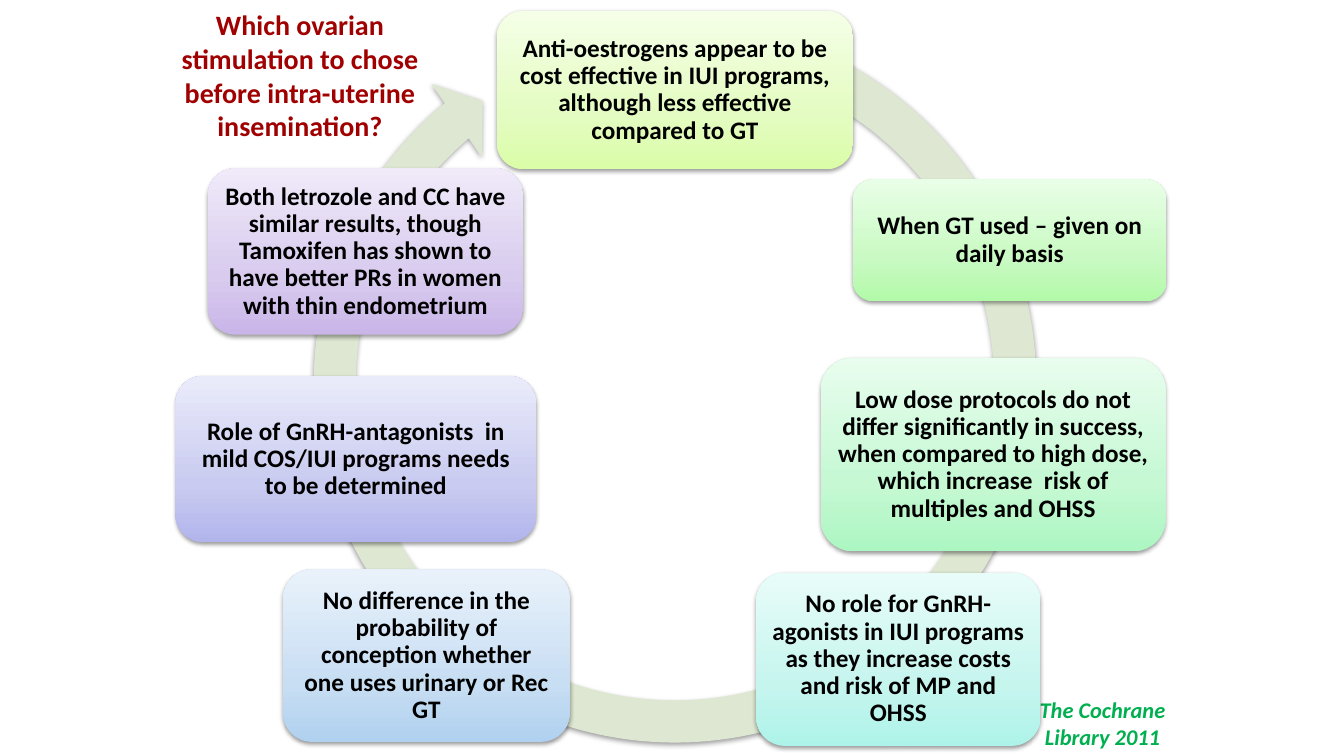
from copy import deepcopy
from dataclasses import dataclass

from lxml import etree
from pptx import Presentation
from pptx.dml.color import RGBColor
from pptx.enum.shapes import MSO_SHAPE
from pptx.enum.text import MSO_ANCHOR, PP_ALIGN
from pptx.oxml.ns import qn
from pptx.util import Pt

ROUNDED = MSO_SHAPE.ROUNDED_RECTANGLE
RING = MSO_SHAPE.CIRCULAR_ARROW
MIDDLE, TOP = MSO_ANCHOR.MIDDLE, MSO_ANCHOR.TOP
CENTER = PP_ALIGN.CENTER
EMU_PER_PX = 9144  # 100 px to the inch


@dataclass(frozen=True)
class Theme:
    font: str = "Calibri"
    ring: str = "DEE7D1"
    text: str = "000000"
    title: str = "A00000"
    source: str = "00B050"
    title_size: int = 20
    card_size: int = 18
    source_size: int = 16


class Deck:
    def __init__(self, prs, theme):
        self.theme = theme
        self.slide = prs.slides.add_slide(prs.slide_layouts[6])

    def box(self, px):
        return [v * EMU_PER_PX for v in px]

    def shadow(self, sp):
        sp.shadow.inherit = False
        effects = sp._element.spPr.find(qn("a:effectLst"))
        outer = etree.SubElement(effects, qn("a:outerShdw"), blurRad="40000",
                                 dist="20000", dir="5400000", rotWithShape="0")
        color = etree.SubElement(outer, qn("a:srgbClr"), val="000000")
        etree.SubElement(color, qn("a:alpha"), val="38000")

    def set_text(self, sp, lines, color, size, anchor=MIDDLE, spacing=1.0, inset=None,
                 italic=False):
        tf = sp.text_frame
        frame = {"word_wrap": True, "vertical_anchor": anchor}
        if inset is not None:
            sides = ("left", "top", "right", "bottom")
            frame.update({f"margin_{side}": inset * EMU_PER_PX for side in sides})
        for name, value in frame.items():
            setattr(tf, name, value)
        font = {"name": self.theme.font, "size": Pt(size), "bold": True, "italic": italic}
        for i, line in enumerate(lines):
            p = tf.paragraphs[0] if i == 0 else tf.add_paragraph()
            p.alignment, p.line_spacing = CENTER, spacing
            r = p.add_run()
            r.text = line
            for name, value in font.items():
                setattr(r.font, name, value)
            r.font.color.rgb = RGBColor.from_string(color)

    def label(self, px, lines, color, size, **style):
        sp = self.slide.shapes.add_textbox(*self.box(px))
        self.set_text(sp, lines, color, size, **style)

    def shape(self, kind, px):
        sp = self.slide.shapes.add_shape(kind, *self.box(px))
        sp.line.fill.background()
        self.shadow(sp)
        return sp

    def ring(self, px, adjustments):
        sp = self.shape(RING, px)
        for i, value in enumerate(adjustments):
            sp.adjustments[i] = value
        sp.fill.solid()
        sp.fill.fore_color.rgb = RGBColor.from_string(self.theme.ring)

    def card(self, px, colors, text):
        sp = self.shape(ROUNDED, px)
        sp.fill.gradient()
        sp.fill.gradient_angle = 90
        stops = sp._element.spPr.find(".//" + qn("a:gsLst"))
        stops.append(deepcopy(stops[0]))
        for stop, position, color in zip(sp.fill.gradient_stops, (0, 0.35, 1), colors):
            stop.position = position
            stop.color.rgb = RGBColor.from_string(color)
        self.set_text(sp, [text], self.theme.text, self.theme.card_size, spacing=0.9, inset=7)


# Cards clockwise from the top: box, gradient from bottom to top, text
CARDS = [
    ((493, 11, 353, 157), ("DAFDA7", "E4FCC2", "F5FFE7"),
     "Anti-oestrogens appear to be cost effective in IUI programs, "
     "although less effective compared to GT"),
    ((846, 178, 311, 121), ("B2FAA9", "C9FAC3", "E9FEE7"),
     "When GT used – given on daily basis"),
    ((814, 355, 342, 192), ("ACF6C1", "C5F8D3", "E8FDEE"),
     "Low dose protocols do not differ significantly in success, when compared "
     "to high dose, which increase  risk of multiples and OHSS"),
    ((750, 568, 282, 172), ("AEF3E9", "C6F5EE", "E8FCF9"),
     "No role for GnRH-agonists in IUI programs as they increase costs "
     "and risk of MP and OHSS"),
    ((281, 565, 284, 171), ("B0D1EF", "C8DEF3", "E9F2FB"),
     "No difference in the probability of conception whether one uses urinary or Rec GT"),
    ((174, 373, 358, 165), ("B2B5EC", "C9CBF0", "EAEBFA"),
     "Role of GnRH-antagonists  in mild COS/IUI programs needs to be determined"),
    ((206, 167, 313, 165), ("C9B5E8", "D8CBEE", "F0EAF9"),
     "Both letrozole and CC have similar results, though Tamoxifen has shown "
     "to have better PRs in women with thin endometrium"),
]


def main():
    prs = Presentation()
    prs.slide_width, prs.slide_height = 1333 * EMU_PER_PX, 750 * EMU_PER_PX
    theme = Theme()
    deck = Deck(prs, theme)

    # Source line
    deck.label((1001, 686, 185, 64), ["The Cochrane", "Library 2011"],
               theme.source, theme.source_size, anchor=TOP, italic=True)

    # Cycle: arrow ring, then the cards on it
    # Adjustments are in units of 100000, angles in 60000ths of a degree
    deck.ring((288, -3, 763, 763), (0.055, 3.307, 138.048, 173.684, 0.058))
    for px, colors, text in CARDS:
        deck.card(px, colors, text)

    # Title
    deck.label((145, -4, 305, 157),
               ["Which ovarian stimulation to chose before intra-uterine insemination?"],
               theme.title, theme.title_size)

    prs.save("out.pptx")


if __name__ == "__main__":
    main()
